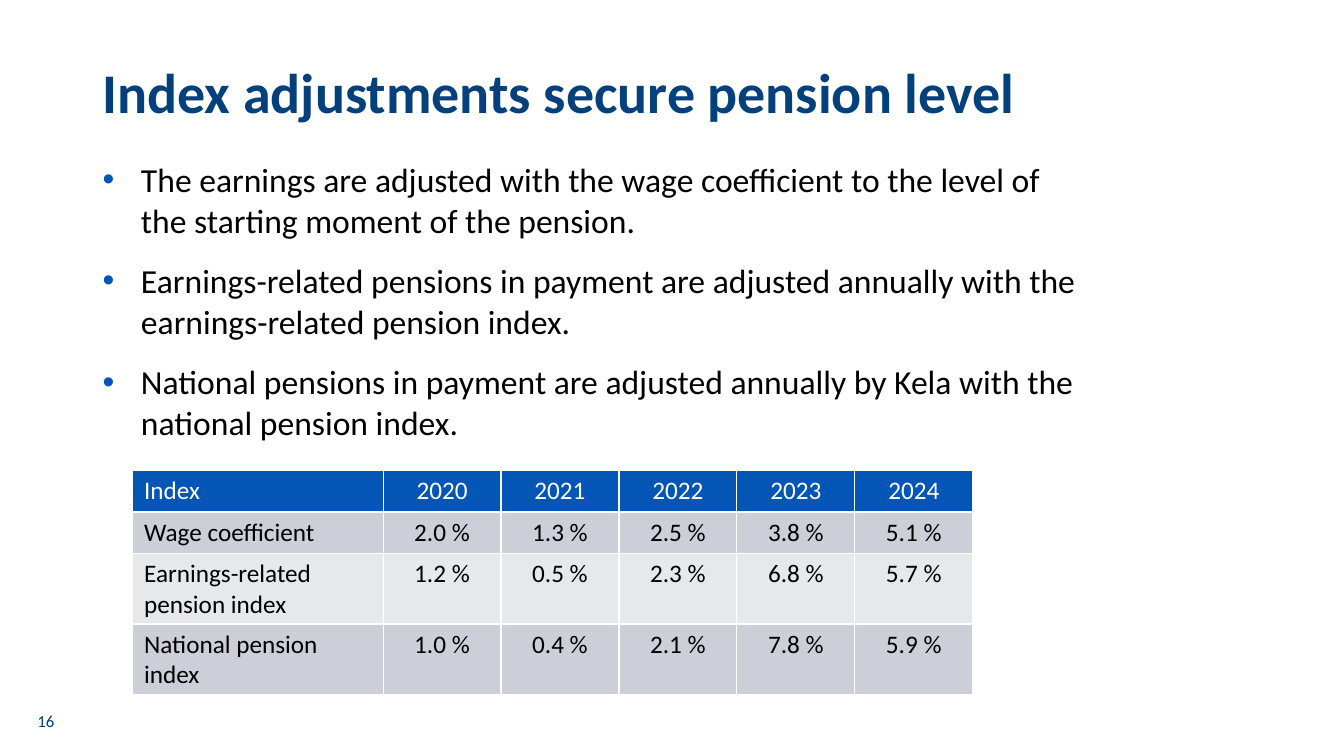
from lxml.etree import SubElement
from pptx import Presentation
from pptx.dml.color import RGBColor
from pptx.enum.text import MSO_ANCHOR, PP_ALIGN
from pptx.oxml.ns import qn
from pptx.util import Inches, Pt

FONT = "Calibri"
NAVY, BLUE, BLACK, WHITE = "03407C", "0356B5", "000000", "FFFFFF"
BANDS = ["CCCFD7", "E7E8EC"]

TITLE = "Index adjustments secure pension level"
POINTS = [
    "The earnings are adjusted with the wage coefficient to the level of the starting moment of the pension.",
    "Earnings-related pensions in payment are adjusted annually with the earnings-related pension index.",
    "National pensions in payment are adjusted annually by Kela with the national pension index.",
]
INDEX_ROWS = [
    ("Index", "2020", "2021", "2022", "2023", "2024"),
    ("Wage coefficient", "2.0 %", "1.3 %", "2.5 %", "3.8 %", "5.1 %"),
    ("Earnings-related pension index", "1.2 %", "0.5 %", "2.3 %", "6.8 %", "5.7 %"),
    ("National pension index", "1.0 %", "0.4 %", "2.1 %", "7.8 %", "5.9 %"),
]
PAGE_NUMBER = "16"

ROW_HEIGHTS = [0.41, 0.41, 0.7, 0.7]
LABEL_WIDTH, YEAR_WIDTH = 2.49, 1.17


def color(value):
    return RGBColor.from_string(value)


def write(frame, texts, *, size, ink=BLACK, bold=False, align=PP_ALIGN.LEFT,
          anchor=MSO_ANCHOR.TOP, spacing=None, gap=0, bullet=None):
    frame.word_wrap = True
    frame.vertical_anchor = anchor
    for number, text in enumerate(texts):
        paragraph = frame.add_paragraph() if number else frame.paragraphs[0]
        if bullet:
            properties = paragraph._p.get_or_add_pPr()
            properties.set("marL", str(Inches(0.38)))
            properties.set("indent", str(-Inches(0.38)))
            tint = SubElement(properties, qn("a:buClr"))
            SubElement(tint, qn("a:srgbClr"), val=bullet)
            SubElement(properties, qn("a:buFont"), typeface="Arial")
            SubElement(properties, qn("a:buChar"), char="•")
        paragraph.alignment = align
        if spacing:
            paragraph.line_spacing = spacing
        if number and gap:
            paragraph.space_before = Pt(gap)
        run = paragraph.add_run()
        run.text = text
        run.font.name = FONT
        run.font.size = Pt(size)
        run.font.bold = bold
        run.font.color.rgb = color(ink)


def add_text(slide, box, texts, **style):
    area = slide.shapes.add_textbox(*map(Inches, box))
    write(area.text_frame, texts, **style)


def add_borders(cell):
    properties = cell._tc.get_or_add_tcPr()
    for position, side in enumerate(("a:lnL", "a:lnR", "a:lnT", "a:lnB")):
        line = SubElement(properties, qn(side), w=str(Pt(1)))
        properties.insert(position, line)
        fill = SubElement(line, qn("a:solidFill"))
        SubElement(fill, qn("a:srgbClr"), val=WHITE)


def fill_cell(cell, text, row, column):
    header, label = row == 0, column == 0
    cell.fill.solid()
    cell.fill.fore_color.rgb = color(BLUE if header else BANDS[(row - 1) % 2])
    add_borders(cell)
    if label:
        left, right, align = 0.12, 0.1, PP_ALIGN.LEFT
    elif header:
        left, right, align = 0.08, 0.08, PP_ALIGN.CENTER
    else:
        left, right, align = 0.08, 0.31, PP_ALIGN.RIGHT
    cell.margin_left, cell.margin_right = Inches(left), Inches(right)
    cell.margin_top = cell.margin_bottom = Inches(0.05)
    write(cell.text_frame, [text], size=18, ink=WHITE if header else BLACK, align=align)
    cell.vertical_anchor = MSO_ANCHOR.MIDDLE if label and not header else MSO_ANCHOR.TOP


def add_index_table(slide):
    widths = [LABEL_WIDTH] + [YEAR_WIDTH] * (len(INDEX_ROWS[0]) - 1)
    box = (1.31, 4.67, sum(widths), sum(ROW_HEIGHTS))
    table = slide.shapes.add_table(len(INDEX_ROWS), len(widths), *map(Inches, box)).table
    for column, width in zip(table.columns, widths):
        column.width = Inches(width)
    for row, height in zip(table.rows, ROW_HEIGHTS):
        row.height = Inches(height)
    for row, values in enumerate(INDEX_ROWS):
        for column, value in enumerate(values):
            fill_cell(table.cell(row, column), value, row, column)


def main():
    deck = Presentation()
    deck.slide_width, deck.slide_height = Inches(13.33), Inches(7.5)
    slide = deck.slides.add_slide(deck.slide_layouts[6])
    add_text(slide, (0.92, 0.6, 9.66, 0.94), [TITLE], size=40, ink=NAVY, bold=True, spacing=0.9)
    add_text(slide, (0.92, 1.53, 9.92, 2.93), POINTS, size=24, gap=14.6, bullet=BLUE)
    add_index_table(slide)
    add_text(slide, (0.2, 6.95, 0.51, 0.4), [PAGE_NUMBER], size=12, ink=NAVY,
             align=PP_ALIGN.CENTER, anchor=MSO_ANCHOR.MIDDLE)
    deck.save("out.pptx")


if __name__ == "__main__":
    main()
